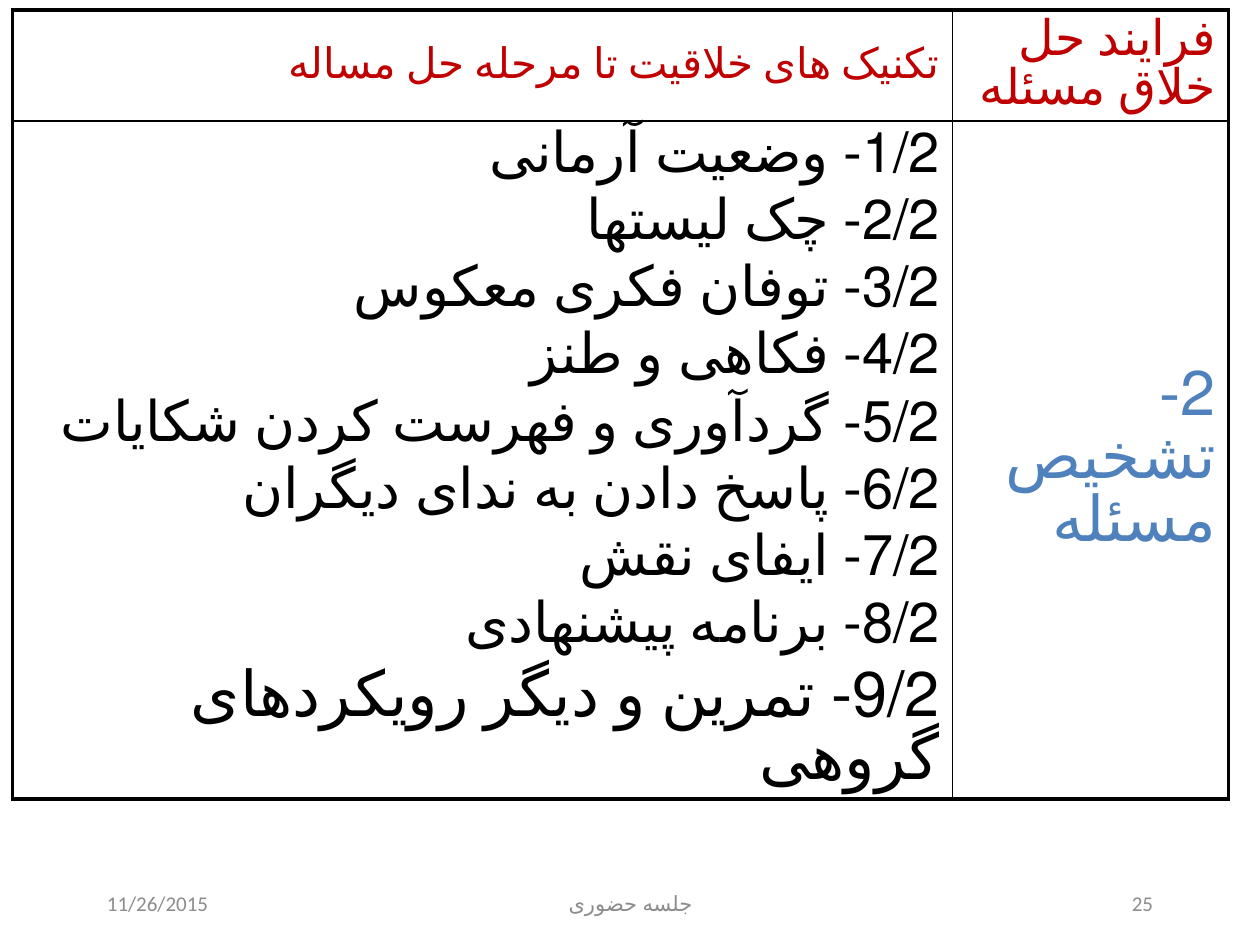
from dataclasses import dataclass

from lxml.etree import SubElement
from pptx import Presentation
from pptx.dml.color import RGBColor
from pptx.enum.lang import MSO_LANGUAGE_ID
from pptx.enum.text import MSO_ANCHOR, PP_ALIGN
from pptx.oxml.ns import qn
from pptx.util import Inches, Pt


@dataclass(frozen=True)
class Theme:
    black: str = "000000"
    red: str = "C00000"
    blue: str = "4F81BD"
    grey: str = "8C8C8C"
    table_font: str = "Times New Roman"
    footer_font: str = "Calibri"
    footer: int = 12
    small_head: int = 24
    head: int = 28
    body: int = 32
    large: int = 36
    outer: float = 2.25
    inner: float = 1


THEME = Theme()

TECHNIQUES = [
    "1/2- وضعیت آرمانی",
    "2/2- چک لیستها",
    "3/2- توفان فکری معکوس",
    "4/2- فکاهی و طنز",
    "5/2- گردآوری و فهرست کردن شکایات",
    "6/2- پاسخ دادن به ندای دیگران",
    "7/2- ایفای نقش",
    "8/2- برنامه پیشنهادی",
]
LAST_TECHNIQUE = "9/2- تمرین و دیگر رویکردهای گروهی"


def format_run(p, font, size, color):
    for r in p.runs:
        r.font.name = font
        r.font.size = Pt(size)
        r.font.color.rgb = RGBColor.from_string(color)
        r.font.language_id = MSO_LANGUAGE_ID.FARSI


def add_footer(slide, text, left, width, align):
    sp = slide.shapes.add_textbox(Inches(left), Inches(6.92), Inches(width), Inches(0.5))
    tf = sp.text_frame
    tf.word_wrap = True
    tf.vertical_anchor = MSO_ANCHOR.MIDDLE
    p = tf.paragraphs[0]
    p.text = text
    p.alignment = align
    format_run(p, THEME.footer_font, THEME.footer, THEME.grey)


def set_borders(cell, row, col):
    """Thick lines on the outside of the 2 x 2 table, thin lines inside."""
    outside = {"L": col == 0, "R": col == 1, "T": row == 0, "B": row == 1}
    tc_pr = cell._tc.get_or_add_tcPr()
    for side, is_outer in outside.items():
        width = THEME.outer if is_outer else THEME.inner
        ln = SubElement(tc_pr, qn(f"a:ln{side}"), w=str(Pt(width)))
        fill = SubElement(ln, qn("a:solidFill"))
        SubElement(fill, qn("a:srgbClr"), val=THEME.black)


def fill_cell(cell, lines, color):
    """Write right-to-left paragraphs from (text, size) pairs."""
    cell.vertical_anchor = MSO_ANCHOR.MIDDLE
    tf = cell.text_frame
    for i, (text, size) in enumerate(lines):
        p = tf.add_paragraph() if i else tf.paragraphs[0]
        p.text = text
        p.alignment = PP_ALIGN.RIGHT
        p.line_spacing = Pt(size)
        p.space_before = Pt(0.2 * size if i else 0)
        p._p.get_or_add_pPr().set("rtl", "1")
        format_run(p, THEME.table_font, size, color)


def add_technique_table(slide):
    widths, heights = (7.46, 2.19), (0.88, 5.38)
    frame = slide.shapes.add_table(2, 2, Inches(0.1), Inches(0.08),
                                   Inches(sum(widths)), Inches(sum(heights)))
    table = frame.table
    table.first_row = table.horz_banding = False
    for column, width in zip(table.columns, widths):
        column.width = Inches(width)
    for row, height in zip(table.rows, heights):
        row.height = Inches(height)

    techniques = [(text, THEME.body) for text in TECHNIQUES]
    techniques.append((LAST_TECHNIQUE, THEME.large))
    contents = [
        [([("تکنیک های خلاقیت تا مرحله حل مساله", THEME.small_head)], THEME.red),
         ([("فرایند حل خلاق مسئله", THEME.head)], THEME.red)],
        [(techniques, THEME.black),
         ([("2- تشخیص مسئله", THEME.large)], THEME.blue)],
    ]
    for i, row in enumerate(contents):
        for j, (lines, color) in enumerate(row):
            cell = table.cell(i, j)
            set_borders(cell, i, j)
            cell.fill.background()
            fill_cell(cell, lines, color)


def main():
    prs = Presentation()
    prs.slide_width, prs.slide_height = Inches(10), Inches(7.5)
    slide = prs.slides.add_slide(prs.slide_layouts[6])

    # Footer: date, session, slide number
    add_footer(slide, "11/26/2015", 0.75, 2.08, PP_ALIGN.LEFT)
    add_footer(slide, "جلسه حضوری", 3.42, 3.17, PP_ALIGN.CENTER)
    add_footer(slide, "25", 7.17, 2.08, PP_ALIGN.RIGHT)

    # Problem-solving stage and its techniques
    add_technique_table(slide)
    prs.save("out.pptx")


if __name__ == "__main__":
    main()
